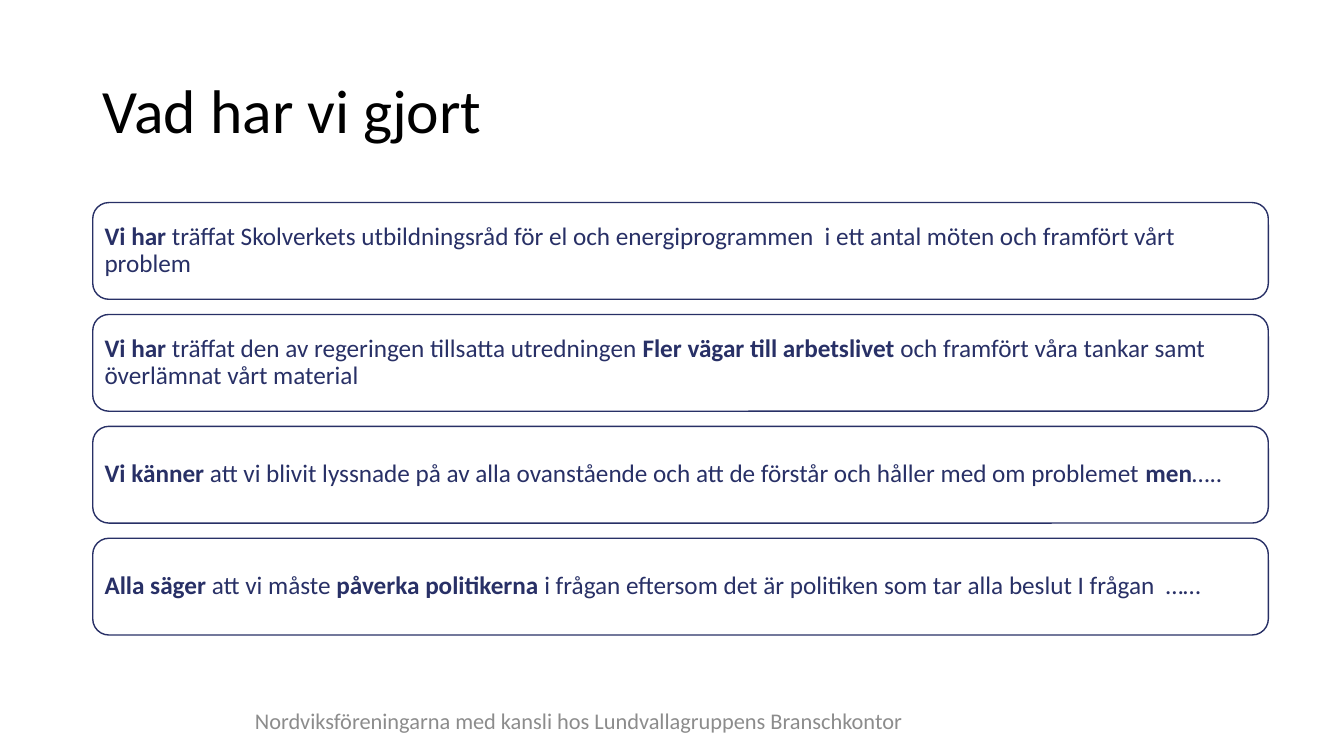
from pptx import Presentation
from pptx.dml.color import RGBColor
from pptx.enum.shapes import MSO_SHAPE
from pptx.enum.text import MSO_ANCHOR, PP_ALIGN
from pptx.util import Inches, Pt

NAVY = RGBColor(0x28, 0x30, 0x66)
GREY = RGBColor(0x8C, 0x8C, 0x8C)
BLACK = RGBColor(0, 0, 0)
WHITE = RGBColor(255, 255, 255)

TITLE = "Vad har vi gjort"
FOOTER = "Nordviksföreningarna med kansli hos Lundvallagruppens Branschkontor"
# In each card, bold and regular parts alternate, bold first
CARDS = [
    ["Vi har ",
     "träffat Skolverkets utbildningsråd för el och energiprogrammen  "
     "i ett antal möten och framfört vårt problem"],
    ["Vi har ", "träffat den av regeringen tillsatta utredningen ",
     "Fler vägar till arbetslivet ",
     "och framfört våra tankar samt överlämnat vårt material"],
    ["Vi känner ",
     "att vi blivit lyssnade på av alla ovanstående och att de förstår "
     "och håller med om problemet ",
     "men", "….."],
    ["Alla säger ", "att vi måste ", "påverka politikerna ",
     "i frågan eftersom det är politiken som tar alla beslut I frågan  ……"],
]
LEFT, TOP, WIDTH, HEIGHT, STEP = 0.92, 2.01, 11.66, 0.96, 1.11
MARGIN = Inches(0.07)


def style(para, size, color, align=PP_ALIGN.LEFT):
    para.alignment = align
    para.font.name = "Calibri"
    para.font.size = Pt(size)
    para.font.color.rgb = color


def add_card(slide, top, parts):
    card = slide.shapes.add_shape(
        MSO_SHAPE.ROUNDED_RECTANGLE,
        Inches(LEFT), Inches(top), Inches(WIDTH), Inches(HEIGHT))
    card.shadow.inherit = False
    card.fill.solid()
    card.fill.fore_color.rgb = WHITE
    card.line.color.rgb = NAVY
    card.line.width = Pt(1)
    frame = card.text_frame
    frame.word_wrap = True
    frame.vertical_anchor = MSO_ANCHOR.MIDDLE
    frame.margin_left = frame.margin_right = MARGIN
    frame.margin_top = frame.margin_bottom = MARGIN
    para = frame.paragraphs[0]
    para.line_spacing = 0.9
    style(para, 18, NAVY)
    for i, part in enumerate(parts):
        run = para.add_run()
        run.text = part
        run.font.bold = i % 2 == 0


def main():
    deck = Presentation()
    deck.slide_width, deck.slide_height = Inches(13.33), Inches(7.5)
    slide = deck.slides.add_slide(deck.slide_layouts[5])

    title = slide.shapes.title
    title.left, title.top = Inches(LEFT), Inches(0.4)
    title.width, title.height = Inches(11.5), Inches(1.45)
    title.text_frame.text = TITLE
    title.text_frame.vertical_anchor = MSO_ANCHOR.MIDDLE
    para = title.text_frame.paragraphs[0]
    para.line_spacing = 0.9
    style(para, 44, BLACK)

    for i, parts in enumerate(CARDS):
        add_card(slide, TOP + i * STEP, parts)

    footer = slide.shapes.add_textbox(
        Inches(2.32), Inches(6.95), Inches(6.84), Inches(0.4)).text_frame
    footer.word_wrap = True
    footer.vertical_anchor = MSO_ANCHOR.MIDDLE
    footer.text = FOOTER
    style(footer.paragraphs[0], 16, GREY, PP_ALIGN.CENTER)

    deck.save("out.pptx")


if __name__ == "__main__":
    main()
